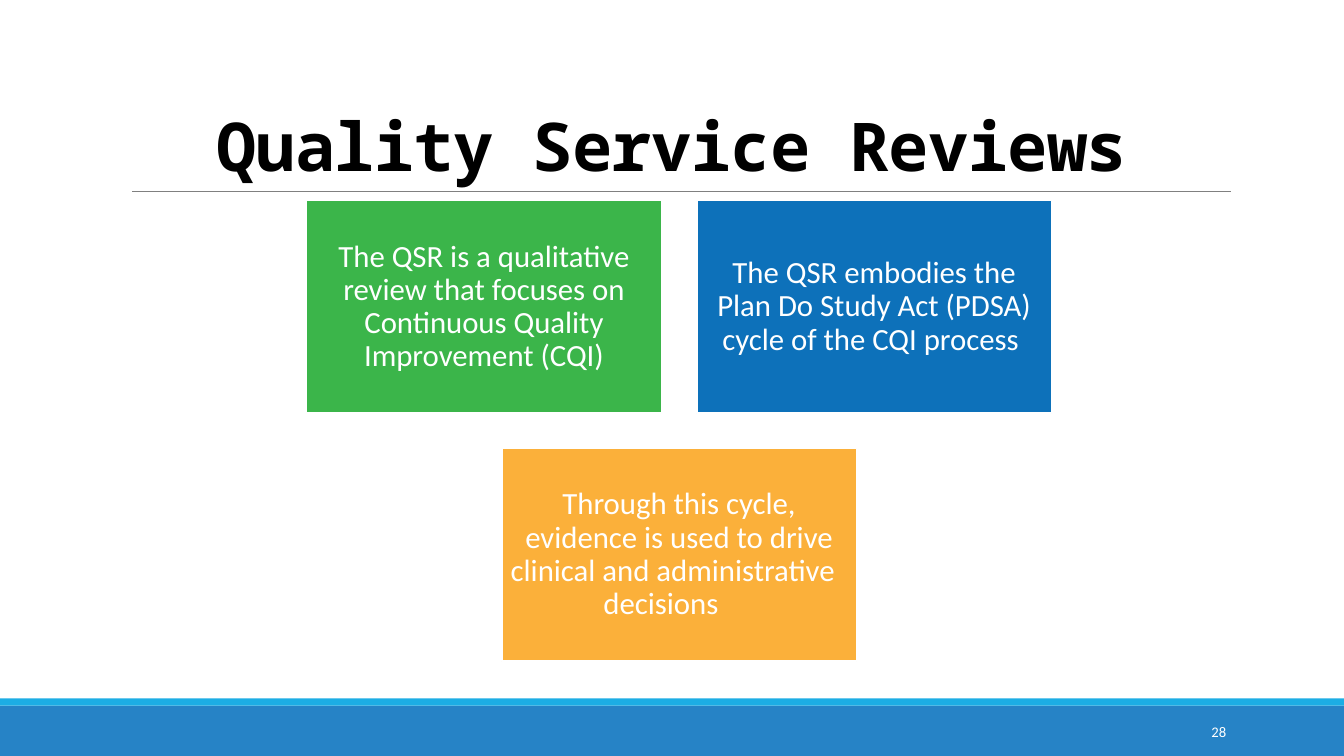
import pptx
import pptx.dml.color
import pptx.enum.shapes
import pptx.enum.text
import pptx.oxml.ns
import pptx.util
from lxml import etree

WIDTH, HEIGHT = 13.33, 7.5
CARD_WIDTH, CARD_HEIGHT = 3.52, 2.11
CARD_GAP = 0.35
CARDS_LEFT, CARDS_TOP = 3.04, 1.99
CARD_INSET = 0.09
FOOTER_TOP, STRIPE_HEIGHT = 7.0, 0.07

# column, row, fill, text
CARDS = [
    (0, 0, "3BB54A", "The QSR is a qualitative review that focuses on "
                     "Continuous Quality Improvement (CQI)"),
    (1, 0, "0D71BA", "The QSR embodies the Plan Do Study Act (PDSA) "
                     "cycle of the CQI process "),
    (0.5, 1, "FBB03A", "Through this cycle, evidence is used to drive "
                       "clinical and administrative \tdecisions \t"),
]

ALIGN = pptx.enum.text.PP_ALIGN
ANCHOR = pptx.enum.text.MSO_ANCHOR


def inches(*lengths):
    return [pptx.util.Inches(length) for length in lengths]


def paint(color_format, color):
    color_format.rgb = pptx.dml.color.RGBColor.from_string(color)


def write(frame, text, size, color, alignment, font="Calibri", bold=False):
    """Fill the frame's first paragraph with one run and return both."""
    frame.word_wrap = True
    paragraph = frame.paragraphs[0]
    paragraph.alignment = alignment
    run = paragraph.add_run()
    run.text = text
    run.font.name = font
    run.font.size = pptx.util.Pt(size)
    run.font.bold = bold
    paint(run.font.color, color)
    return paragraph, run


def add_block(slide, left, top, width, height, fill):
    shape = slide.shapes.add_shape(
        pptx.enum.shapes.MSO_SHAPE.RECTANGLE, *inches(left, top, width, height))
    shape.shadow.inherit = False
    shape.fill.solid()
    paint(shape.fill.fore_color, fill)
    shape.line.fill.background()
    return shape


def add_rule(slide, left, right, y, color, width):
    connector = slide.shapes.add_connector(
        pptx.enum.shapes.MSO_CONNECTOR.STRAIGHT, *inches(left, y, right, y))
    paint(connector.line.color, color)
    connector.line.width = pptx.util.Pt(width)
    properties = connector._element.spPr
    etree.SubElement(properties, pptx.oxml.ns.qn("a:effectLst"))


def add_card(slide, column, row, fill, text):
    left = CARDS_LEFT + column * (CARD_WIDTH + CARD_GAP)
    top = CARDS_TOP + row * (CARD_HEIGHT + CARD_GAP)
    card = add_block(slide, left, top, CARD_WIDTH, CARD_HEIGHT, fill)
    paint(card.line.color, "FFFFFF")
    card.line.width = pptx.util.Pt(1.25)
    frame = card.text_frame
    frame.vertical_anchor = ANCHOR.MIDDLE
    inset = pptx.util.Inches(CARD_INSET)
    frame.margin_left = frame.margin_right = inset
    frame.margin_top = frame.margin_bottom = inset
    paragraph, _ = write(frame, text, 22, "FFFFFF", ALIGN.CENTER)
    paragraph.line_spacing = 0.9


def set_title(slide, text):
    title = slide.shapes.title
    title.left, title.top, title.width, title.height = inches(0, 1.09, WIDTH, 0.8)
    frame = title.text_frame
    frame.auto_size = pptx.enum.text.MSO_AUTO_SIZE.NONE
    frame.vertical_anchor = ANCHOR.BOTTOM
    paragraph, run = write(frame, text, 48, "000000", ALIGN.CENTER,
                           "Noto Sans Mono", True)
    paragraph.line_spacing = 0.85
    run.font._element.set("spc", "-50")


def add_slide_number(slide, number):
    box = slide.shapes.add_textbox(*inches(10.83, 7.06, 1.43, 0.4))
    box.text_frame.vertical_anchor = ANCHOR.MIDDLE
    write(box.text_frame, number, 10.5, "FFFFFF", ALIGN.RIGHT)


def main():
    presentation = pptx.Presentation()
    presentation.slide_width, presentation.slide_height = inches(WIDTH, HEIGHT)
    slide = presentation.slides.add_slide(presentation.slide_layouts[5])

    add_block(slide, 0, FOOTER_TOP, WIDTH, HEIGHT - FOOTER_TOP, "2683C6")
    add_block(slide, 0, FOOTER_TOP - STRIPE_HEIGHT, WIDTH, STRIPE_HEIGHT, "1CADE4")
    add_rule(slide, 1.31, 12.21, 1.9, "808080", 0.5)
    set_title(slide, "Quality Service Reviews")
    for card in CARDS:
        add_card(slide, *card)
    add_slide_number(slide, "28")

    presentation.save("out.pptx")


if __name__ == "__main__":
    main()
